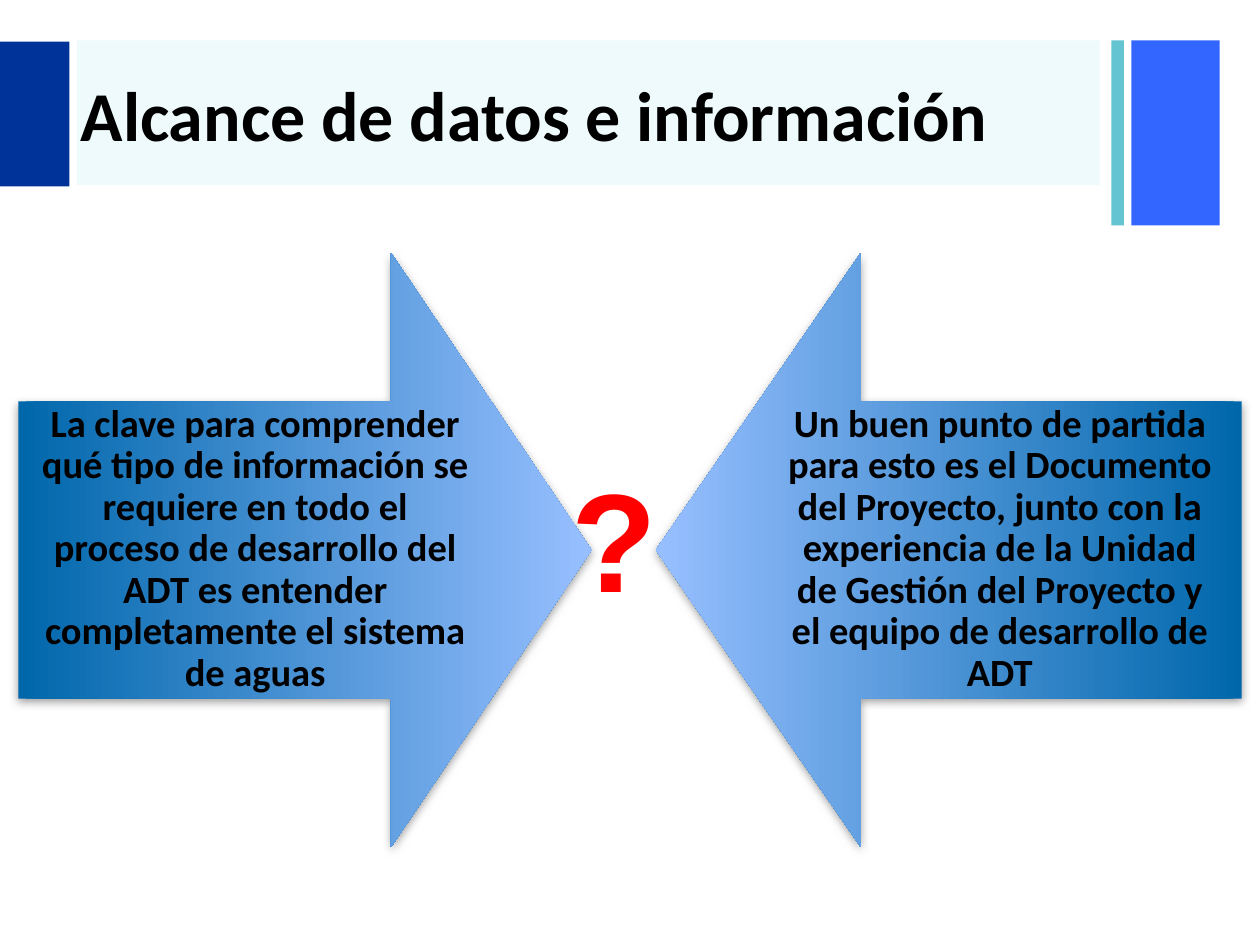
from dataclasses import dataclass
from typing import Any, Optional

from lxml import etree
from pptx import Presentation
from pptx import util as u
from pptx.dml.color import RGBColor
from pptx.enum import shapes, text
from pptx.oxml.ns import qn

# The slide is a grid of square cells
COLUMNS, ROWS = 100, 75
CELL = u.Inches(0.1)


@dataclass(frozen=True)
class Theme:
    font: str = "Calibri"
    mark_font: str = "Arial"
    title_size: float = 40
    body_size: float = 22
    mark_size: float = 80
    ink: str = "000000"
    mark: str = "FF0000"
    mark_outline: str = "7D7D7D"
    blue: str = "3366FF"
    teal: str = "65C4D2"
    banner: str = "14C5D0"
    navy: str = "003399"
    arrow_tail: str = "0067AB"
    arrow_tip: str = "97BFFF"
    shadow: str = "808080"


THEME = Theme()


@dataclass(frozen=True)
class Box:
    column: float
    row: float
    columns: float
    rows: float

    def lengths(self) -> list[int]:
        return [round(value * CELL) for value in (self.column, self.row, self.columns, self.rows)]


@dataclass(frozen=True)
class Bar:
    box: Box
    color: str
    opacity: Optional[int] = None


@dataclass(frozen=True)
class Arrow:
    box: Box
    rotation: int
    text_box: Box
    words: str


BARS = [
    Bar(Box(89.8, 3.2, 7, 14.7), THEME.blue),
    Bar(Box(88.2, 3.2, 1, 14.7), THEME.teal),
    Bar(Box(6.1, 3.2, 81.2, 11.5), THEME.banner, opacity=7),
    Bar(Box(0, 3.3, 5.5, 11.5), THEME.navy),
]

ARROWS = [
    Arrow(Box(0.6, 20.9, 47.2, 45.5), 270, Box(1.5, 31.8, 37.5, 23.6),
          "La clave para comprender qué tipo de información se requiere en todo el "
          "proceso de desarrollo del ADT es entender completamente el sistema de aguas"),
    Arrow(Box(51.7, 20.4, 47.2, 46.5), 90, Box(60.2, 31.8, 38.3, 23.6),
          "Un buen punto de partida para esto es el Documento del Proyecto, junto con la "
          "experiencia de la Unidad de Gestión del Proyecto y el equipo de desarrollo de ADT"),
]


def apply(target: Any, values: dict[str, Any]) -> None:
    for name, value in values.items():
        setattr(target, name, value)


def add_color(parent: Any, color: str, opacity: Optional[int] = None) -> None:
    element = etree.SubElement(parent, qn("a:srgbClr"), val=color)
    if opacity is not None:
        etree.SubElement(element, qn("a:alpha"), val=str(opacity * 1000))


def write(shape: Any, words: str, font: str, size: float, color: str,
          frame: dict[str, Any], paragraph_format: dict[str, Any]) -> Any:
    """Fill a shape with one bold paragraph and return its run."""
    apply(shape.text_frame, {"word_wrap": True, "auto_size": text.MSO_AUTO_SIZE.NONE, **frame})
    paragraph = shape.text_frame.paragraphs[0]
    apply(paragraph, paragraph_format)
    run = paragraph.add_run()
    run.text = words
    apply(run.font, {"name": font, "size": u.Pt(size), "bold": True})
    run.font.color.rgb = RGBColor.from_string(color)
    return run


def add_bar(slide: Any, bar: Bar) -> Any:
    shape = slide.shapes.add_shape(shapes.MSO_SHAPE.RECTANGLE, *bar.box.lengths())
    shape.shadow.inherit = False
    shape.line.fill.background()
    shape.fill.solid()
    shape.fill.fore_color.rgb = RGBColor.from_string(bar.color)
    if bar.opacity is not None:
        fill = shape.element.spPr.find(qn("a:solidFill"))
        fill.remove(fill[0])
        add_color(fill, bar.color, bar.opacity)
    return shape


def add_arrow(slide: Any, arrow: Arrow) -> None:
    group = slide.shapes.add_group_shape()
    shape = group.shapes.add_shape(shapes.MSO_SHAPE.DOWN_ARROW, *arrow.box.lengths())
    shape.rotation = arrow.rotation
    shape.adjustments[0], shape.adjustments[1] = 0.5, 0.35

    # Gradient from tail to tip
    shape.fill.gradient()
    shape.fill.gradient_angle = 270
    for stop, color in zip(shape.fill.gradient_stops, (THEME.arrow_tail, THEME.arrow_tip)):
        stop.color.rgb = RGBColor.from_string(color)
    shape.line.fill.background()

    # Soft shadow below
    shape.shadow.inherit = False
    effects = shape.element.spPr.find(qn("a:effectLst"))
    shadow = etree.SubElement(effects, qn("a:outerShdw"), blurRad=str(u.Pt(5)),
                              dist=str(u.Pt(2)), dir="5400000", rotWithShape="0")
    add_color(shadow, THEME.shadow, 75)

    # Text over the arrow
    box = group.shapes.add_textbox(*arrow.text_box.lengths())
    margins = {f"margin_{side}": u.Inches(0.17) for side in ("left", "top", "right", "bottom")}
    write(box, arrow.words, THEME.font, THEME.body_size, THEME.ink,
          {"vertical_anchor": text.MSO_ANCHOR.MIDDLE, **margins},
          {"alignment": text.PP_ALIGN.CENTER, "line_spacing": 0.9,
           "space_after": u.Pt(0.35 * THEME.body_size)})


def add_title(slide: Any, words: str) -> None:
    title = slide.shapes.title
    apply(title, dict(zip(("left", "top", "width", "height"),
                          Box(5.4, 3.4, 82.7, 11.2).lengths())))
    write(title, words, THEME.font, THEME.title_size, THEME.ink,
          {"vertical_anchor": text.MSO_ANCHOR.MIDDLE}, {"alignment": text.PP_ALIGN.LEFT})


def add_question_mark(slide: Any) -> None:
    box = slide.shapes.add_textbox(*Box(44.4, 35.4, 10.4, 14.5).lengths())
    run = write(box, "?", THEME.mark_font, THEME.mark_size, THEME.mark,
                {"auto_size": text.MSO_AUTO_SIZE.SHAPE_TO_FIT_TEXT}, {})
    outline = etree.Element(qn("a:ln"), w=str(u.Pt(0.83)))
    add_color(etree.SubElement(outline, qn("a:solidFill")), THEME.mark_outline)
    run.font.fill  # the outline goes before the fill
    run._r.get_or_add_rPr().insert(0, outline)


def main() -> None:
    presentation = Presentation()
    apply(presentation, {"slide_width": COLUMNS * CELL, "slide_height": ROWS * CELL})
    slide = presentation.slides.add_slide(presentation.slide_layouts[5])

    # Banner bars lie behind the title
    add_title(slide, "Alcance de datos e información")
    for bar in BARS:
        slide.shapes.title.element.addprevious(add_bar(slide, bar).element)

    # Facing arrows and the question between them
    for arrow in ARROWS:
        add_arrow(slide, arrow)
    add_question_mark(slide)
    presentation.save("out.pptx")


if __name__ == "__main__":
    main()
